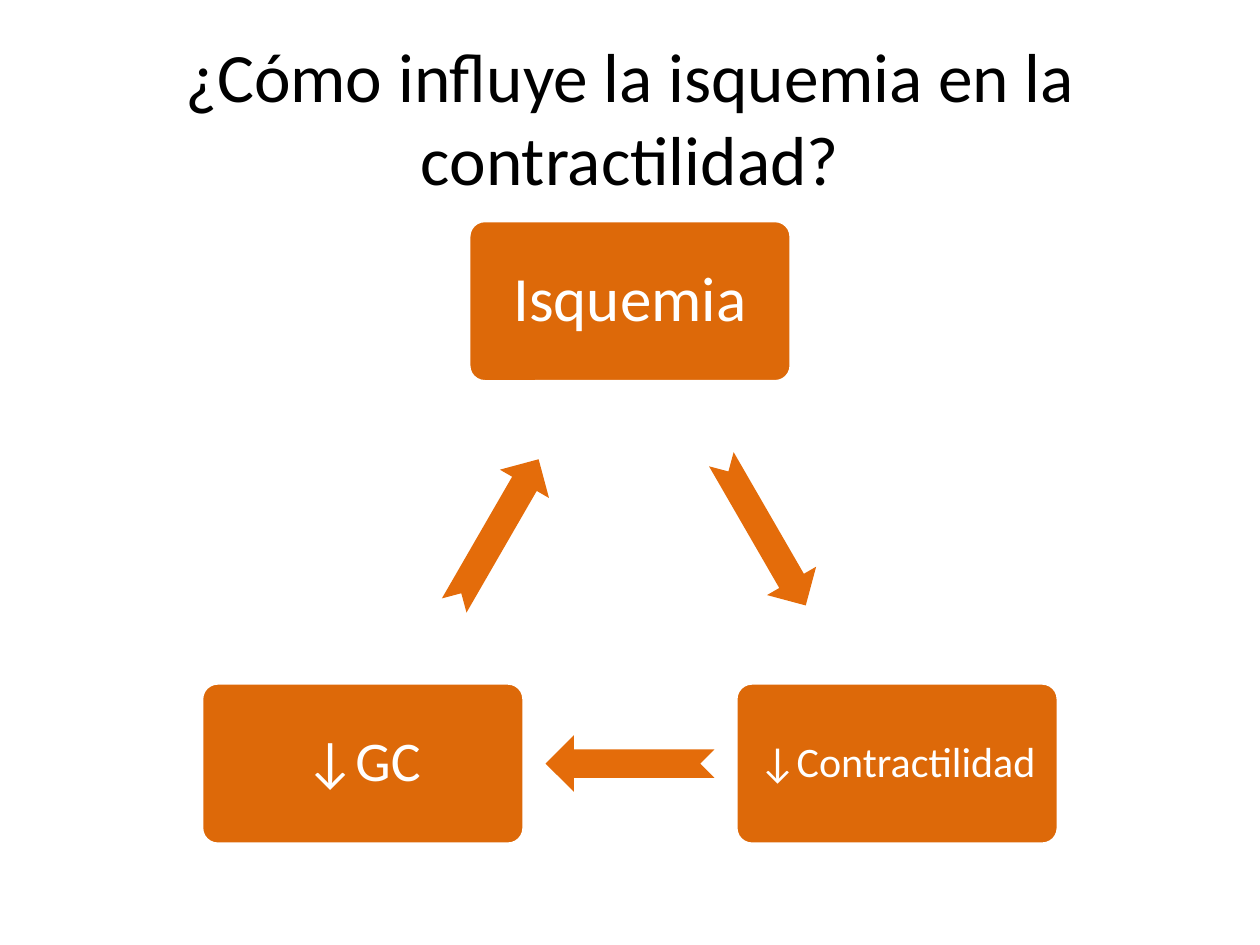
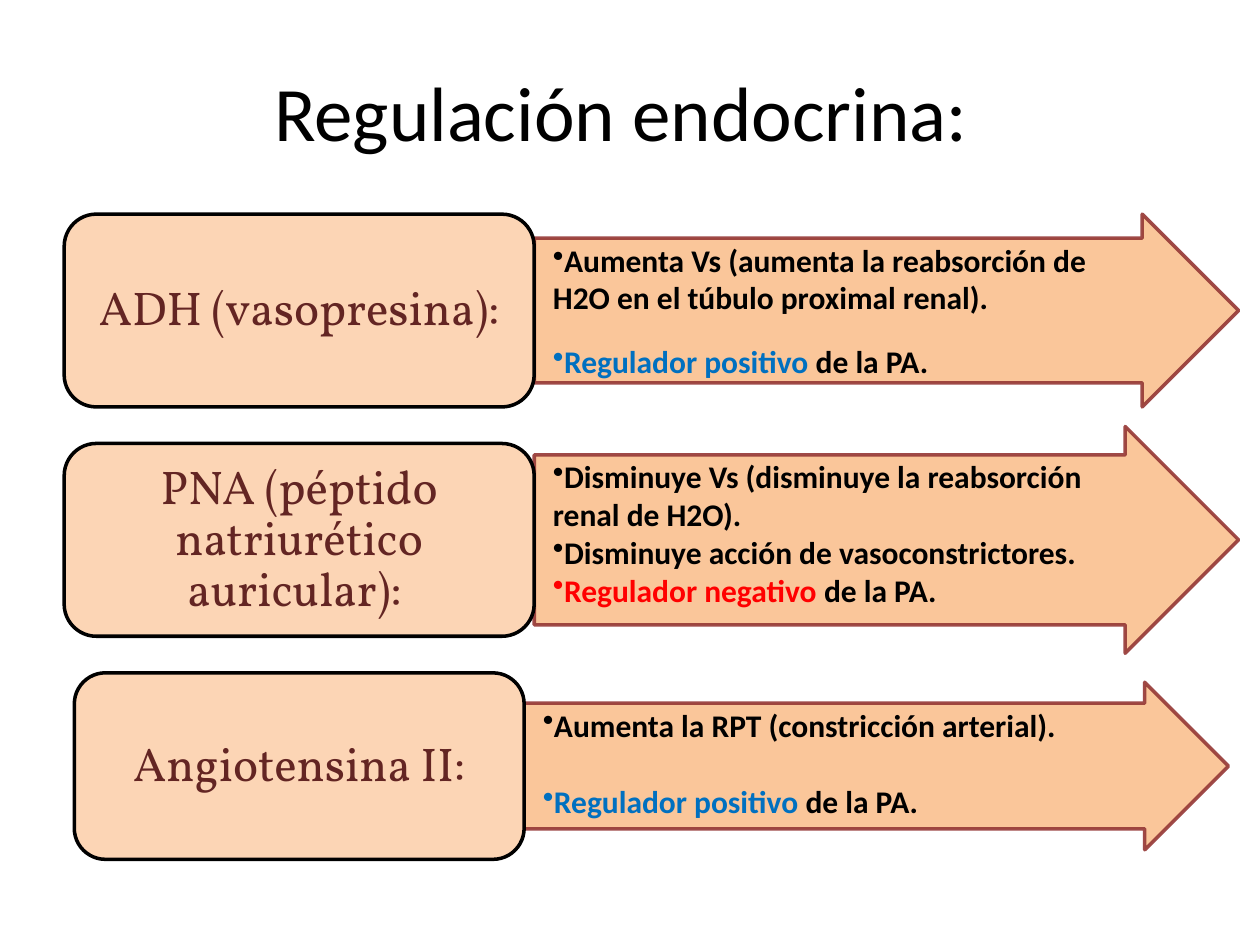
from lxml import etree
from pptx import Presentation
from pptx.dml.color import RGBColor
from pptx.enum.shapes import MSO_SHAPE as Form
from pptx.enum.text import MSO_ANCHOR as Anchor, PP_ALIGN as Align
from pptx.oxml.ns import qn
from pptx.util import Inches, Pt

# Shared style
FONT, SERIF = "Calibri", "Vollkorn"
BLACK, WHITE = "000000", "FFFFFF"
NODE, LINK = "DD6909", "E46C0A"
LABEL, WINE = "FCD5B5", "632523"
ARROW, EDGE = "FAC090", "953735"
BLUE, RED = "0070C0", "FF0000"


def rgb(code):
    return RGBColor.from_string(code)


def add_run(para, text, size, color, font=FONT, bold=False):
    run = para.add_run()
    run.text = text
    run.font.size = Pt(size)
    run.font.name = font
    run.font.bold = bold
    run.font.color.rgb = rgb(color)


def add_title(slide, text, top, left, height, size):
    title = slide.shapes.title
    title.left, title.top = Inches(left), Inches(top)
    title.width, title.height = Inches(9), Inches(height)
    frame = title.text_frame
    frame.word_wrap = True
    frame.vertical_anchor = Anchor.MIDDLE
    para = frame.paragraphs[0]
    para.alignment = Align.CENTER
    add_run(para, text, size, BLACK)


def add_form(slide, form, box, fill, line=None):
    shape = slide.shapes.add_shape(form, *map(Inches, box))
    shape.shadow.inherit = False
    shape.fill.solid()
    shape.fill.fore_color.rgb = rgb(fill)
    if line:
        shape.line.color.rgb = rgb(line)
        shape.line.width = Pt(2)
    else:
        shape.line.fill.background()
    return shape


def fade(shape, percent):
    """Make fill and line partly transparent."""
    for color in shape.fill._xPr.iter(qn("a:srgbClr")):
        etree.SubElement(color, qn("a:alpha"), val=str(percent * 1000))


def add_label(shape, text, size, color, font, pad_x, pad_y):
    frame = shape.text_frame
    frame.word_wrap = True
    frame.vertical_anchor = Anchor.MIDDLE
    frame.margin_left = frame.margin_right = Inches(pad_x)
    frame.margin_top = frame.margin_bottom = Inches(pad_y)
    para = frame.paragraphs[0]
    para.alignment = Align.CENTER
    para.line_spacing = 0.9
    add_run(para, text, size, color, font)


def add_cycle(slide, box, nodes):
    """Three nodes on a triangle, with an arrow halfway along each side."""
    left, top, width, height = box
    node_w, node_h, link_w, link_h = 2.56, 1.28, 1.34, 0.45
    low = top + height - node_h / 2
    spots = [(left + width / 2, top + node_h / 2),
             (left + width - node_w / 2, low),
             (left + node_w / 2, low)]
    for i, ((x, y), (text, size, pad)) in enumerate(zip(spots, nodes)):
        node = add_form(slide, Form.ROUNDED_RECTANGLE,
                        (x - node_w / 2, y - node_h / 2, node_w, node_h),
                        NODE, WHITE)
        node.adjustments[0] = 0.1
        add_label(node, text, size, WHITE, FONT, pad, pad)
        next_x, next_y = spots[(i + 1) % 3]
        mid_x, mid_y = (x + next_x) / 2, (y + next_y) / 2
        link = add_form(slide, Form.NOTCHED_RIGHT_ARROW,
                        (mid_x - link_w / 2, mid_y - link_h / 2,
                         link_w, link_h), LINK)
        link.rotation = 60 + 120 * i


def add_points(slide, box, points):
    """Bulleted lines; each is a gap before it and its runs."""
    frame = slide.shapes.add_textbox(*map(Inches, box)).text_frame
    frame.word_wrap = True
    for i, (gap, runs) in enumerate(points):
        para = frame.add_paragraph() if i else frame.paragraphs[0]
        props = para._p.get_or_add_pPr()
        etree.SubElement(props, qn("a:buChar"), char="•")
        para.space_before = Pt(gap)
        for text, color in runs:
            add_run(para, text, 18, color, bold=True)


def add_row(slide, box, arrow_h, name, points):
    """A label box with a wide arrow centred on its right side."""
    left, top, width, height = box
    x, y = left + width, top + (height - arrow_h) / 2
    arrow = add_form(slide, Form.RIGHT_ARROW, (x, y, 5.59, arrow_h),
                     ARROW, EDGE)
    arrow.adjustments[0] = 0.75
    fade(arrow, 90)
    label = add_form(slide, Form.ROUNDED_RECTANGLE, box, LABEL, BLACK)
    add_label(label, name, 27, WINE, SERIF, 0.11, 0.06)
    add_points(slide, (x + 0.05, y + arrow_h / 8 - 0.03, 4.7, arrow_h - 0.2),
               points)


def effect(word, color):
    return [(f"Regulador {word} ", color), ("de la PA.", BLACK)]


def plain(text):
    return [(text, BLACK)]


def main():
    deck = Presentation()
    deck.slide_width, deck.slide_height = Inches(10), Inches(7.5)
    layout = deck.slide_layouts[5]

    # Ischemia cycle
    slide = deck.slides.add_slide(layout)
    add_title(slide, "¿Cómo influye la isquemia en la contractilidad?",
              0.3, 0.5, 1.25, 39.6)
    add_cycle(slide, (1.6, 1.75, 6.8, 4.95), [
        ("Isquemia", 36, 0.15),
        ("↓Contractilidad", 24, 0.1),
        ("↓GC", 32, 0.13),
    ])

    # Hormones and their effects
    slide = deck.slides.add_slide(layout)
    add_title(slide, "Regulación endocrina:", 0.52, 0.43, 0.71, 44)
    rows = [
        ((0.51, 1.7, 3.73, 1.53), 1.53, "ADH (vasopresina):", [
            (0, plain("Aumenta Vs (aumenta la reabsorción de H2O "
                      "en el túbulo proximal renal).")),
            (14.5, effect("positivo", BLUE))]),
        ((0.51, 3.52, 3.73, 1.53), 1.8,
         "PNA (péptido natriurético auricular): ", [
            (0, plain("Disminuye Vs (disminuye la reabsorción "
                      "renal de H2O).")),
            (0, plain("Disminuye acción de vasoconstrictores.")),
            (0, effect("negativo", RED))]),
        ((0.59, 5.34, 3.57, 1.48), 1.33, "Angiotensina II:", [
            (0, plain("Aumenta la RPT (constricción arterial).")),
            (22, effect("positivo", BLUE))]),
    ]
    for row in rows:
        add_row(slide, *row)

    deck.save("out.pptx")


if __name__ == "__main__":
    main()
